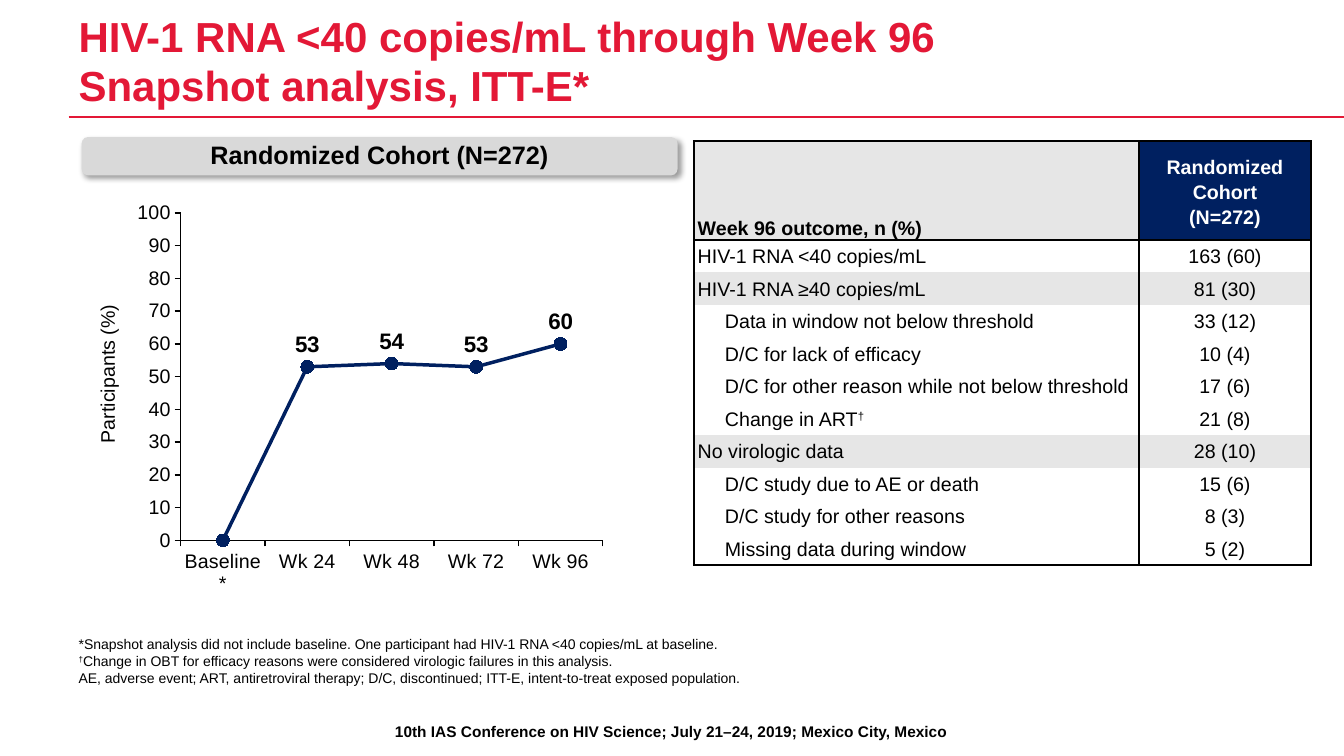
from dataclasses import dataclass

from lxml.etree import SubElement
from pptx import Presentation
from pptx.chart.data import CategoryChartData
from pptx.dml.color import RGBColor
from pptx.enum.chart import XL_CHART_TYPE as ChartType, XL_LABEL_POSITION as LabelPosition
from pptx.enum.chart import XL_MARKER_STYLE as Marker, XL_TICK_MARK as TickMark
from pptx.enum.shapes import MSO_CONNECTOR as Connector, MSO_SHAPE as Shape
from pptx.enum.text import MSO_ANCHOR as Anchor, PP_ALIGN as Align
from pptx.oxml import parse_xml
from pptx.oxml.ns import nsdecls, qn
from pptx.util import Pt

PX = 9144
FONT = "Arial"
BLACK, WHITE, RED, NAVY = "000000", "FFFFFF", "E31836", "002060"
BAND, PILL = "E6E6E6", "D9D9D9"
HEADER_HEIGHT, TABLE_HEIGHT = 98, 421


@dataclass
class TextStyle:
    size: int
    color: str = BLACK
    bold: bool = False
    align: Align = Align.LEFT
    spacing: object = None
    indent: int = 0


@dataclass
class TextBox:
    box: tuple
    lines: list
    style: TextStyle
    anchor: Anchor = Anchor.TOP
    insets: tuple = (10, 5, 10, 5)
    rotation: int = 0
    wrap: bool = True


@dataclass
class Outcome:
    label: str
    value: str
    indent: int = 27
    fill: str = ""


TEXT_BOXES = [
    TextBox((9, 711, 1314, 29), ["10th IAS Conference on HIV Science; July 21–24, 2019; Mexico City, Mexico"],
            TextStyle(11, bold=True, align=Align.CENTER)),
    TextBox((78, 17, 1100, 92), ["HIV-1 RNA <40 copies/mL through Week 96\nSnapshot analysis, ITT-E*"],
            TextStyle(30, RED, True, spacing=Pt(35)), Anchor.BOTTOM, (0, 0, 0, 0)),
    TextBox((78, 623, 1219, 58), [
        "*Snapshot analysis did not include baseline. One participant had HIV-1 RNA <40 copies/mL at baseline.",
        "†Change in OBT for efficacy reasons were considered virologic failures in this analysis.",
        "AE, adverse event; ART, antiretroviral therapy; D/C, discontinued; ITT-E, intent-to-treat exposed population.",
    ], TextStyle(10), Anchor.BOTTOM, (0, 0, 0, 0)),
    TextBox((27, 354, 159, 34), ["Participants (%)"], TextStyle(14, align=Align.CENTER),
            rotation=270, wrap=False),
]

OUTCOMES = [
    Outcome("HIV-1 RNA <40 copies/mL", "163 (60)", 0),
    Outcome("HIV-1 RNA ≥40 copies/mL", "81 (30)", 0, BAND),
    Outcome("Data in window not below threshold", "33 (12)"),
    Outcome("D/C for lack of efficacy", "10 (4)"),
    Outcome("D/C for other reason while not below threshold", "17 (6)"),
    Outcome("Change in ART†", "21 (8)"),
    Outcome("No virologic data", "28 (10)", 0, BAND),
    Outcome("D/C study due to AE or death", "15 (6)"),
    Outcome("D/C study for other reasons", "8 (3)"),
    Outcome("Missing data during window", "5 (2)"),
]


def rgb(color: str) -> RGBColor:
    return RGBColor.from_string(color)


def scaled(lengths: tuple) -> list:
    return [length * PX for length in lengths]


def style_font(font, size: int, color: str = BLACK, bold: bool = False) -> None:
    font.name, font.size, font.bold = FONT, Pt(size), bold
    font.color.rgb = rgb(color)


def add_run(paragraph, text: str, style: TextStyle) -> None:
    run = paragraph.add_run()
    run.text = text
    style_font(run.font, style.size, style.color, style.bold)
    if text == "†":
        run._r.get_or_add_rPr().set("baseline", "30000")


def write_lines(frame, lines: list, style: TextStyle) -> None:
    for index, line in enumerate(lines):
        paragraph = frame.add_paragraph() if index else frame.paragraphs[0]
        paragraph.alignment = style.align
        paragraph.line_spacing = style.spacing
        if style.indent:
            paragraph._p.get_or_add_pPr().set("marL", str(style.indent * PX))
        for number, part in enumerate(line.split("\n")):
            if number:
                paragraph.add_line_break()
            before, dagger, after = part.partition("†")
            for text in filter(None, (before, dagger, after)):
                add_run(paragraph, text, style)


def set_insets(target, insets: tuple) -> None:
    (target.margin_left, target.margin_top,
     target.margin_right, target.margin_bottom) = scaled(insets)


def add_text(slide, item: TextBox) -> None:
    shape = slide.shapes.add_textbox(*scaled(item.box))
    shape.rotation = item.rotation
    frame = shape.text_frame
    frame.word_wrap = item.wrap
    frame.vertical_anchor = item.anchor
    set_insets(frame, item.insets)
    write_lines(frame, item.lines, item.style)


def add_title_rule(slide) -> None:
    rule = slide.shapes.add_connector(Connector.STRAIGHT, *scaled((68, 116, 1333, 116)))
    rule.line.color.rgb = rgb(RED)
    rule.line.width = Pt(2)
    SubElement(rule._element.spPr, qn("a:effectLst"))


def add_cohort_heading(slide) -> None:
    shape = slide.shapes.add_shape(Shape.ROUNDED_RECTANGLE, *scaled((81, 136, 591, 38)))
    shape.fill.solid()
    shape.fill.fore_color.rgb = rgb(PILL)
    shape.line.fill.background()
    shape._element.spPr.append(parse_xml(
        f'<a:effectLst {nsdecls("a")}><a:outerShdw blurRad="{Pt(4)}" dist="{Pt(3)}" dir="2700000" '
        f'algn="tl" rotWithShape="0"><a:srgbClr val="{BLACK}"><a:alpha val="40000"/></a:srgbClr>'
        '</a:outerShdw></a:effectLst>'))
    frame = shape.text_frame
    frame.vertical_anchor = Anchor.MIDDLE
    set_insets(frame, (0, 5, 0, 5))
    write_lines(frame, ["Randomized Cohort (N=272)"],
                TextStyle(18, bold=True, align=Align.CENTER, spacing=0.9))


def add_response_chart(slide) -> None:
    data = CategoryChartData()
    data.categories = ["Baseline*", "Wk 24", "Wk 48", "Wk 72", "Wk 96"]
    data.add_series("Series 1", (0, 53, 54, 53, 60))
    chart = slide.shapes.add_chart(ChartType.LINE_MARKERS, *scaled((80, 149, 551, 445)), data).chart
    chart.has_legend = chart.has_title = False
    style_font(chart.font, 12)
    for axis in (chart.category_axis, chart.value_axis):
        axis.has_major_gridlines = False
        axis.major_tick_mark, axis.minor_tick_mark = TickMark.OUTSIDE, TickMark.NONE
        axis.format.line.color.rgb = rgb(BLACK)
        axis.format.line.width = Pt(1)
        style_font(axis.tick_labels.font, 14)
    scale = chart.value_axis
    scale.minimum_scale, scale.maximum_scale, scale.major_unit = 0, 100, 10
    chart.plots[0].vary_by_categories = False
    series = chart.plots[0].series[0]
    series.smooth = False
    series.format.line.color.rgb = rgb(NAVY)
    series.format.line.width = Pt(2.5)
    series.marker.style, series.marker.size = Marker.CIRCLE, 9
    series.marker.format.fill.solid()
    series.marker.format.fill.fore_color.rgb = rgb(NAVY)
    series.marker.format.line.color.rgb = rgb(NAVY)
    labels = series.data_labels
    labels.show_value, labels.position = True, LabelPosition.ABOVE
    style_font(labels.font, 16, bold=True)
    labels._element.insert(0, parse_xml(
        f'<c:dLbl {nsdecls("c")}><c:idx val="0"/><c:delete val="1"/></c:dLbl>'))
    area = chart._chartSpace.chart.plotArea
    for layout in area.findall(qn("c:layout")):
        area.remove(layout)
    area.insert(0, parse_xml(
        f'<c:layout {nsdecls("c")}><c:manualLayout><c:layoutTarget val="inner"/>'
        '<c:xMode val="edge"/><c:yMode val="edge"/><c:x val="0.18"/><c:y val="0.14"/>'
        '<c:w val="0.76"/><c:h val="0.73"/></c:manualLayout></c:layout>'))


def fill_cell(cell, lines: list, style: TextStyle, fill: str, anchor: Anchor, edges: str) -> None:
    side = 1 if style.align == Align.CENTER else 4
    set_insets(cell, (side, 1, side, 0))
    cell.vertical_anchor = anchor
    write_lines(cell.text_frame, lines, style)
    properties = cell._tc.get_or_add_tcPr()
    for edge in "LRTB":
        paint = f'<a:solidFill><a:srgbClr val="{BLACK}"/></a:solidFill>' if edge in edges else "<a:noFill/>"
        properties.append(parse_xml(f'<a:ln{edge} {nsdecls("a")} w="{Pt(1.5)}">{paint}</a:ln{edge}>'))
    if fill:
        cell.fill.solid()
        cell.fill.fore_color.rgb = rgb(fill)
    else:
        cell.fill.background()


def add_outcome_table(slide) -> None:
    count = len(OUTCOMES)
    table = slide.shapes.add_table(count + 1, 2, *scaled((688, 140, 612, TABLE_HEIGHT))).table
    table.columns[0].width, table.columns[1].width = scaled((442, 170))
    table.rows[0].height = HEADER_HEIGHT * PX
    fill_cell(table.cell(0, 0), ["Week 96 outcome, n (%)"],
              TextStyle(14, bold=True, align=Align.JUSTIFY, spacing=1.15), BAND, Anchor.BOTTOM, "LRTB")
    fill_cell(table.cell(0, 1), ["Randomized Cohort", "(N=272)"],
              TextStyle(14, WHITE, True, Align.CENTER, 1.15), NAVY, Anchor.MIDDLE, "LRTB")
    for row, outcome in enumerate(OUTCOMES, 1):
        table.rows[row].height = (TABLE_HEIGHT - HEADER_HEIGHT) * PX // count
        edges = "LR" + ("T" if row == 1 else "") + ("B" if row == count else "")
        fill_cell(table.cell(row, 0), [outcome.label], TextStyle(14, align=Align.JUSTIFY, indent=outcome.indent),
                  outcome.fill, Anchor.MIDDLE, edges)
        fill_cell(table.cell(row, 1), [outcome.value], TextStyle(14, align=Align.CENTER),
                  outcome.fill, Anchor.MIDDLE, edges)


def main() -> None:
    presentation = Presentation()
    presentation.slide_width, presentation.slide_height = scaled((1333, 750))
    slide = presentation.slides.add_slide(presentation.slide_layouts[6])
    add_title_rule(slide)
    add_response_chart(slide)
    add_cohort_heading(slide)
    add_outcome_table(slide)
    for item in TEXT_BOXES:
        add_text(slide, item)
    presentation.save("out.pptx")


if __name__ == "__main__":
    main()
